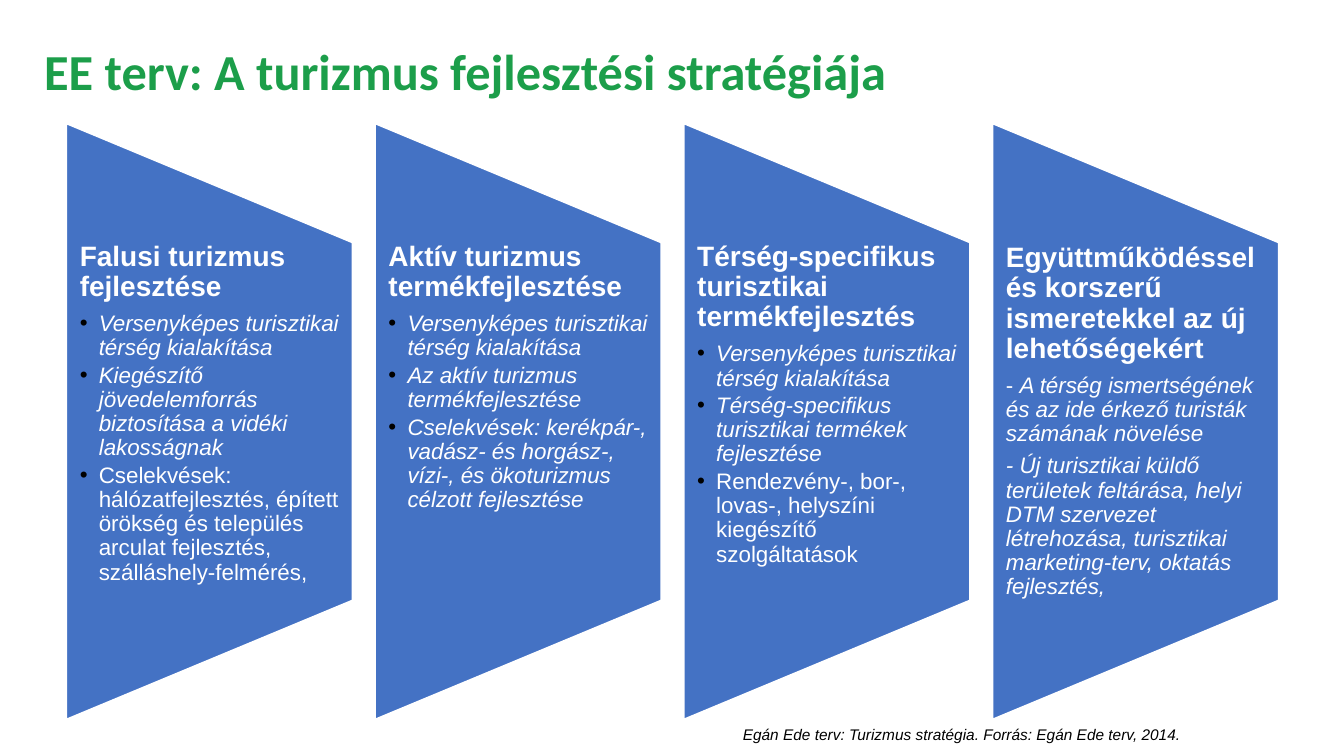
from dataclasses import dataclass

from lxml.etree import SubElement
from pptx import Presentation
from pptx.dml.color import RGBColor
from pptx.enum.shapes import MSO_SHAPE
from pptx.enum.text import MSO_ANCHOR, MSO_AUTO_SIZE, PP_ALIGN
from pptx.oxml.ns import qn
from pptx.util import Cm, Pt

WHITE, BLACK, BLUE, GREEN = "FFFFFF", "000000", "4472C4", "1C9E4A"
LEFT, TOP, WIDTH, HEIGHT, STEP = 1.66, 6.1, 7.24, 9.04, 7.78
LENGTH = 15.06  # full height of a pillar


@dataclass(frozen=True)
class Part:
    text: str
    slant: bool = True


@dataclass(frozen=True)
class Pillar:
    head: str
    items: tuple[tuple[Part, ...], ...]
    dots: bool = True


SHARED = (Part("Versenyképes turisztikai térség kialakítása"),)
PILLARS = (
    Pillar("Falusi turizmus fejlesztése", (
        SHARED,
        (Part("Kiegészítő jövedelemforrás biztosítása a vidéki lakosságnak"),),
        (Part("Cselekvések: hálózatfejlesztés, épített örökség és település "
              "arculat fejlesztés, szálláshely-felmérés,", False),),
    )),
    Pillar("Aktív turizmus termékfejlesztése", (
        SHARED,
        (Part("Az aktív turizmus termékfejlesztése"),),
        (Part("Cselekvések: kerékpár-, vadász- és horgász-, vízi-, "
              "és ökoturizmus célzott fejlesztése"),),
    )),
    Pillar("Térség-specifikus turisztikai termékfejlesztés", (
        SHARED,
        (Part("Térség-specifikus turisztikai termékek fejlesztése"),),
        (Part("Rendezvény-, bor-, lovas-, helyszíni kiegészítő "
              "szolgáltatások", False),),
    )),
    Pillar("Együttműködéssel és korszerű ismeretekkel az új lehetőségekért", (
        (Part("- ", False),
         Part("A térség ismertségének és az ide érkező turisták számának növelése")),
        (Part("- Új turisztikai küldő területek feltárása, helyi DTM szervezet "
              "létrehozása, turisztikai marketing-terv, oktatás fejlesztés,"),),
    ), dots=False),
)


def color(code: str) -> RGBColor:
    return RGBColor.from_string(code)


def place(shape, left: float, top: float, width: float, height: float) -> None:
    shape.left, shape.top = Cm(left), Cm(top)
    shape.width, shape.height = Cm(width), Cm(height)


def add_run(para, text: str, size: float, code: str, bold: bool = False,
            slant: bool = False, face: str = "Arial") -> None:
    run = para.add_run()
    run.text = text
    font = run.font
    font.name, font.size, font.bold, font.italic = face, Pt(size), bold, slant
    font.color.rgb = color(code)


def set_para(para, after: float, dot: bool = False) -> None:
    props = para._p.get_or_add_pPr()
    hang = Cm(0.48) if dot else 0
    props.set("marL", str(hang))
    props.set("indent", str(-hang))
    if dot:
        tint = SubElement(props, qn("a:buClr"))
        SubElement(tint, qn("a:srgbClr")).set("val", BLACK)
        SubElement(props, qn("a:buFont")).set("typeface", "Arial")
        SubElement(props, qn("a:buChar")).set("char", "•")
    else:
        SubElement(props, qn("a:buNone"))
    para.alignment = PP_ALIGN.LEFT
    para.line_spacing = 0.9
    para.space_before, para.space_after = Pt(0), Pt(after)


def draw_pillar(slide, holder, pillar: Pillar, left: float) -> None:
    # Trapezoid turned on its side
    shape = slide.shapes.add_shape(
        MSO_SHAPE.FLOWCHART_MANUAL_OPERATION,
        Cm(left + (WIDTH - LENGTH) / 2), Cm(TOP + (HEIGHT - WIDTH) / 2),
        Cm(LENGTH), Cm(WIDTH))
    shape.rotation = 270
    shape.shadow.inherit = False
    shape.fill.solid()
    shape.fill.fore_color.rgb = color(BLUE)
    shape.line.color.rgb = color(WHITE)
    shape.line.width = Pt(2)

    # List in front of the trapezoid
    slide.shapes._spTree.append(holder._element)
    place(holder, left, TOP, WIDTH, HEIGHT)
    frame = holder.text_frame
    frame.auto_size = MSO_AUTO_SIZE.NONE
    frame.word_wrap = True
    frame.vertical_anchor = MSO_ANCHOR.TOP if pillar.dots else MSO_ANCHOR.MIDDLE
    frame.margin_left = frame.margin_right = Cm(0.35)
    frame.margin_top = frame.margin_bottom = 0
    head = frame.paragraphs[0]
    set_para(head, 7)
    add_run(head, pillar.head, 20, WHITE, bold=True)
    for item in pillar.items:
        para = frame.add_paragraph()
        set_para(para, 2.4 if pillar.dots else 5.6, pillar.dots)
        for part in item:
            add_run(para, part.text, 16, WHITE, slant=part.slant)


def main() -> None:
    deck = Presentation()
    deck.slide_width, deck.slide_height = Cm(33.87), Cm(19.05)
    # The comparison layout has a title and four body holders
    slide = deck.slides.add_slide(deck.slide_layouts[4])

    # Title
    title = slide.shapes.title
    place(title, 0.86, 0.03, 32.11, 3.68)
    title.text_frame.auto_size = MSO_AUTO_SIZE.NONE
    title.text_frame.vertical_anchor = MSO_ANCHOR.MIDDLE
    para = title.text_frame.paragraphs[0]
    set_para(para, 0)
    add_run(para, "EE terv: A turizmus fejlesztési stratégiája", 36, GREEN,
            bold=True, face="Calibri")

    # Four pillars
    for col, pillar in enumerate(PILLARS):
        draw_pillar(slide, slide.placeholders[col + 1], pillar, LEFT + col * STEP)

    # Source line
    note = slide.shapes.add_textbox(Cm(18.47), Cm(18.14), Cm(11.66), Cm(0.74))
    note.text_frame.word_wrap = False
    note.text_frame.auto_size = MSO_AUTO_SIZE.SHAPE_TO_FIT_TEXT
    add_run(note.text_frame.paragraphs[0],
            "Egán Ede terv: Turizmus stratégia. Forrás: Egán Ede terv, 2014.",
            11, BLACK, slant=True)

    deck.save("out.pptx")


if __name__ == "__main__":
    main()
